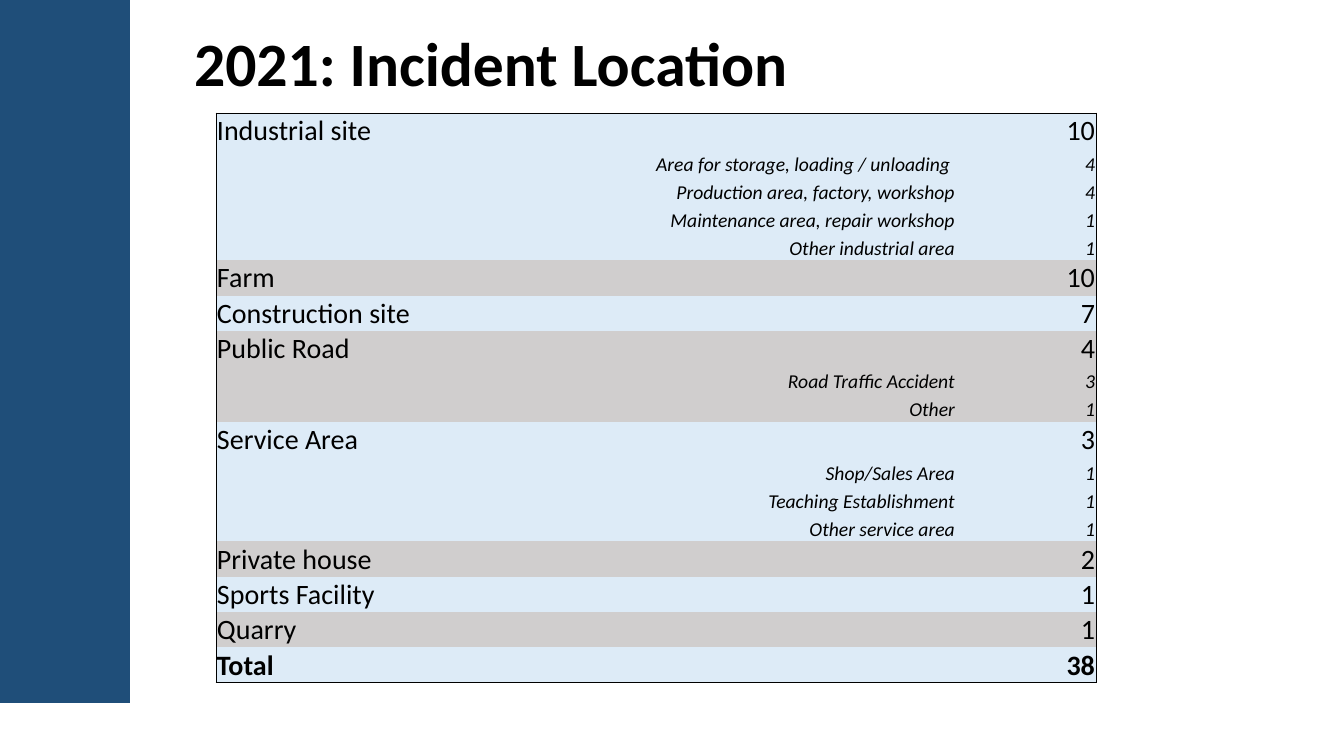
from lxml.etree import SubElement
from pptx import Presentation
from pptx.dml.color import RGBColor
from pptx.enum.shapes import MSO_SHAPE
from pptx.enum.text import MSO_ANCHOR, PP_ALIGN
from pptx.oxml.ns import qn
from pptx.util import Emu, Pt

NAVY = RGBColor(0x1F, 0x4E, 0x79)
BLACK = RGBColor(0x00, 0x00, 0x00)
PALE_BLUE = RGBColor(0xDD, 0xEB, 0xF7)
GREY = RGBColor(0xD0, 0xCE, 0xCE)

LOCATIONS = [
    ("Industrial site", 10, [
        ("Area for storage, loading / unloading ", 4),
        ("Production area, factory, workshop", 4),
        ("Maintenance area, repair workshop", 1),
        ("Other industrial area", 1),
    ]),
    ("Farm", 10, []),
    ("Construction site", 7, []),
    ("Public Road", 4, [("Road Traffic Accident", 3), ("Other", 1)]),
    ("Service Area", 3, [
        ("Shop/Sales Area", 1),
        ("Teaching Establishment", 1),
        ("Other service area", 1),
    ]),
    ("Private house", 2, []),
    ("Sports Facility", 1, []),
    ("Quarry", 1, []),
    ("Total", 38, []),
]


def px(length):
    return Emu(round(length * 914400 / 100.8))


class IncidentPage:
    font_name = "Calibri"
    row_height = 28

    def __init__(self, deck):
        self.page = deck.slides.add_slide(deck.slide_layouts[5])

    def style(self, paragraph, size, bold=False, italic=False, align=PP_ALIGN.LEFT):
        paragraph.alignment = align
        font = paragraph.font
        font.name, font.size = self.font_name, Pt(size)
        font.bold, font.italic = bold, italic
        font.color.rgb = BLACK

    def title(self, text, left, top, width, height):
        box = self.page.shapes.title
        box.left, box.top, box.width, box.height = map(px, (left, top, width, height))
        frame = box.text_frame
        frame.text = text
        frame.vertical_anchor = MSO_ANCHOR.MIDDLE
        paragraph = frame.paragraphs[0]
        paragraph.line_spacing = 0.9
        self.style(paragraph, 44, bold=True)

    def bar(self, left, top, width, height):
        shape = self.page.shapes.add_shape(
            MSO_SHAPE.RECTANGLE, *map(px, (left, top, width, height)))
        shape.shadow.inherit = False
        shape.fill.solid()
        shape.fill.fore_color.rgb = NAVY
        shape.line.fill.background()

    def borders(self, cell, drawn):
        properties = cell._tc.get_or_add_tcPr()
        for side in ("L", "R", "T", "B"):
            line = SubElement(properties, qn(f"a:ln{side}"), w=str(Pt(0.5)))
            if side in drawn:
                fill = SubElement(line, qn("a:solidFill"))
                SubElement(fill, qn("a:srgbClr"), val=str(BLACK))
            else:
                SubElement(line, qn("a:noFill"))

    def cell(self, cell, text, color, drawn, **text_style):
        cell.text = text
        cell.vertical_anchor = MSO_ANCHOR.BOTTOM
        cell.margin_left = cell.margin_right = cell.margin_top = px(1)
        cell.margin_bottom = 0
        self.style(cell.text_frame.paragraphs[0], **text_style)
        self.borders(cell, drawn)
        cell.fill.solid()
        cell.fill.fore_color.rgb = color

    def location_table(self, locations, left, top, column_widths):
        rows = []
        for index, (name, count, details) in enumerate(locations):
            color = GREY if index % 2 else PALE_BLUE
            rows.append((name, count, color, False))
            rows += [(detail, number, color, True) for detail, number in details]
        table = self.page.shapes.add_table(
            len(rows), len(column_widths), px(left), px(top),
            px(sum(column_widths)), px(self.row_height * len(rows))).table
        table.first_row = table.horz_banding = False
        for column, width in zip(table.columns, column_widths):
            column.width = px(width)
        for index, (name, count, color, is_detail) in enumerate(rows):
            table.rows[index].height = px(self.row_height)
            edge = {0: "T", len(rows) - 1: "B"}.get(index, "")
            look = dict(size=14 if is_detail else 20, italic=is_detail,
                        bold=name == "Total")
            name_align = PP_ALIGN.RIGHT if is_detail else PP_ALIGN.LEFT
            self.cell(table.cell(index, 0), name, color, "L" + edge,
                      align=name_align, **look)
            self.cell(table.cell(index, 1), str(count), color, "R" + edge,
                      align=PP_ALIGN.RIGHT, **look)


def main():
    deck = Presentation()
    deck.slide_width, deck.slide_height = px(1344), px(756)
    page = IncidentPage(deck)
    page.bar(-2, 0, 132, 703)
    page.title("2021: Incident Location", 184, 12, 1160, 110)
    page.location_table(LOCATIONS, 216, 113, (740, 140))
    deck.save("out.pptx")


if __name__ == "__main__":
    main()
